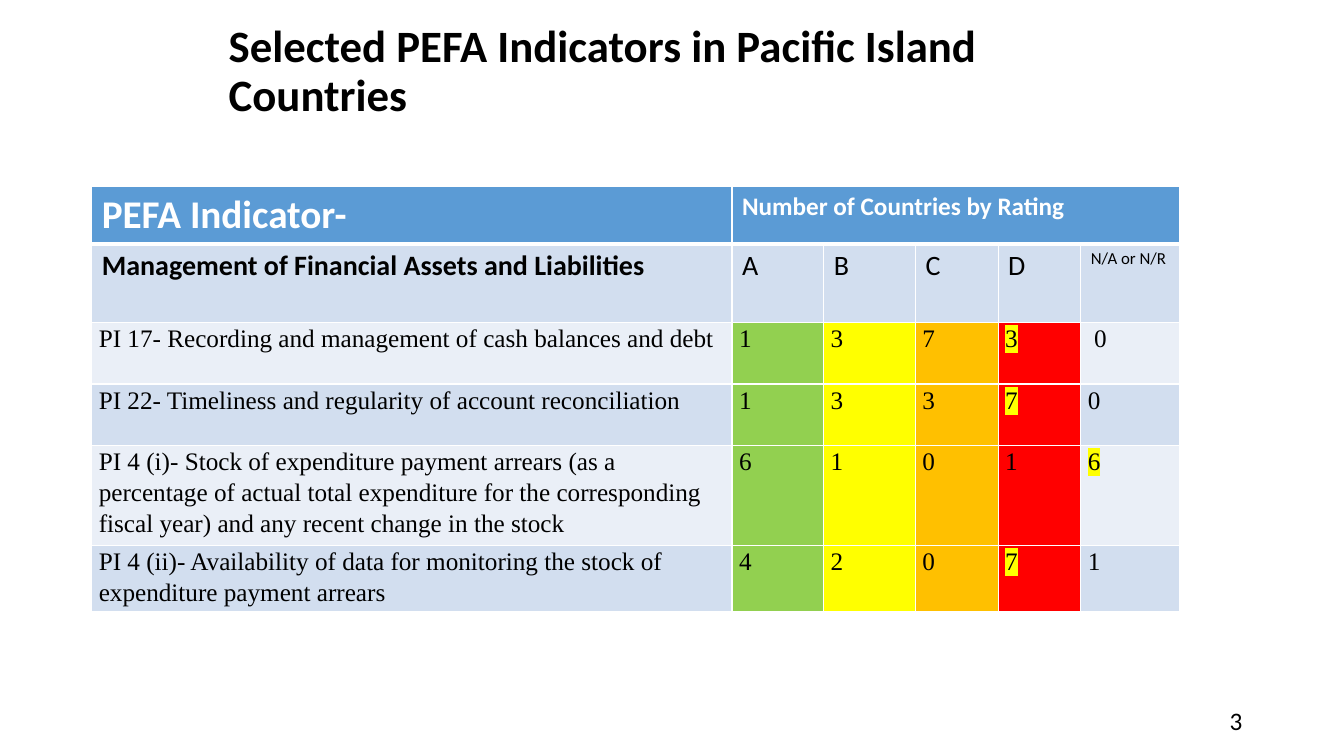
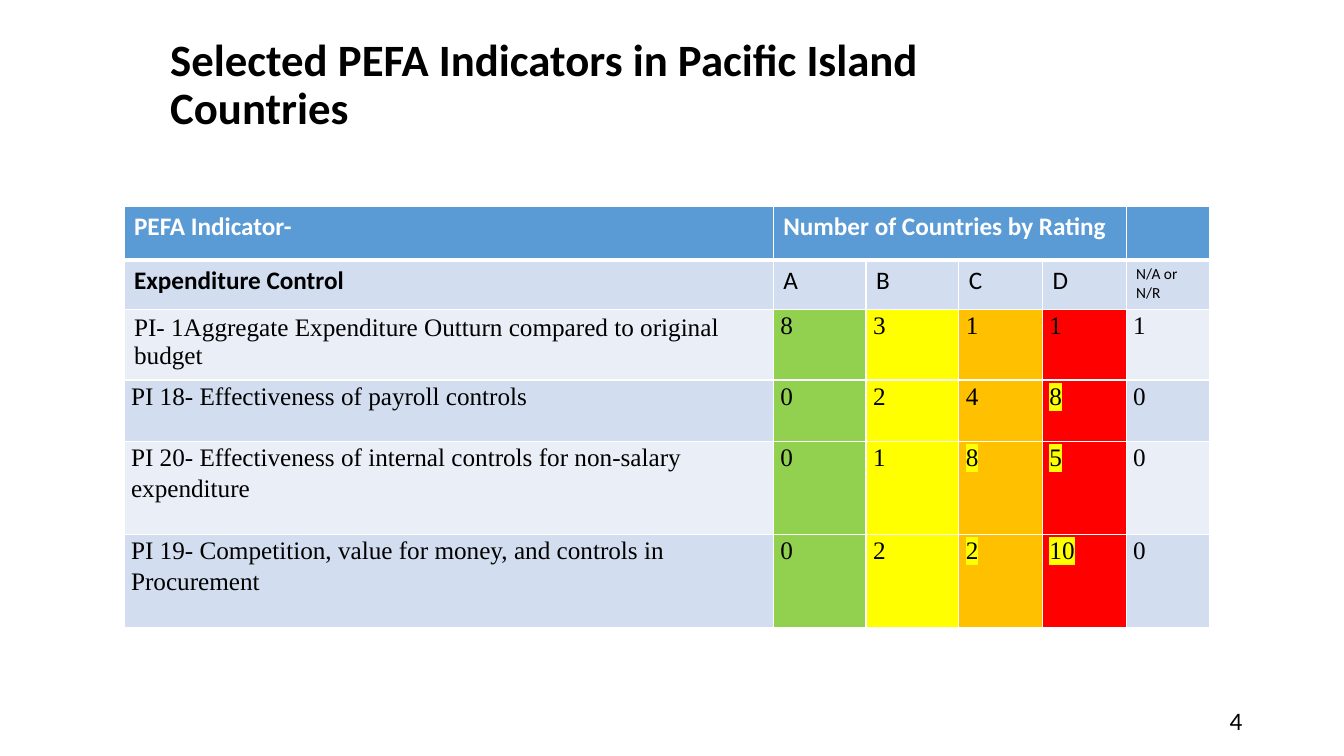
from lxml import etree
from pptx import Presentation
from pptx.dml.color import RGBColor
from pptx.enum.text import MSO_ANCHOR, PP_ALIGN
from pptx.oxml.ns import qn
from pptx.util import Inches, Pt

BLACK = RGBColor(0x00, 0x00, 0x00)
WHITE = RGBColor(0xFF, 0xFF, 0xFF)
HEADER_BLUE = RGBColor(0x5B, 0x9B, 0xD5)
BAND_DARK = RGBColor(0xD2, 0xDE, 0xEF)
BAND_LIGHT = RGBColor(0xEA, 0xEF, 0xF7)
GREEN = RGBColor(0x92, 0xD0, 0x50)
YELLOW = RGBColor(0xFF, 0xFF, 0x00)
AMBER = RGBColor(0xFF, 0xC0, 0x00)
RED = RGBColor(0xFF, 0x00, 0x00)
RATING_FILLS = [GREEN, YELLOW, AMBER, RED]

SANS, SERIF = "Calibri", "Times New Roman"
TITLE = "Selected PEFA Indicators in Pacific Island Countries"
INDICATOR, COUNTS = "PEFA Indicator-", "Number of Countries by Rating"
RATINGS = ["A", "B", "C", "D", "N/A or N/R"]
MARK = "*"  # a value ending in this is highlighted
WIDE_INSETS, TIGHT_INSETS = (0.1, 0.05), (0.07, 0)

# Content: each row is an indicator and its counts for A, B, C, D, N/A
SLIDES = [
    dict(
        page="3", title_at=(2.17, 0.3, 9, 0.84), table_at=(0.91, 1.85),
        columns=[6.35, 0.91, 0.91, 0.82, 0.82, 0.98],
        heights=[0.57, 0.78, 0.61, 0.61, 0.92, 0.61],
        area="Management of Financial Assets and Liabilities",
        header_size=28, area_size=20, na_size=12, header_span=5, wide_rows=[],
        rows=[
            ("PI 17- Recording and management of cash balances and debt",
             "1", "3", "7", "3*", " 0"),
            ("PI 22- Timeliness and regularity of account reconciliation",
             "1", "3", "3", "7*", "0"),
            ("PI 4 (i)- Stock of expenditure payment arrears (as a percentage of "
             "actual total expenditure for the corresponding fiscal year) and any "
             "recent change in the stock",
             "6", "1", "0", "1", "6*"),
            ("PI 4 (ii)- Availability of data for monitoring the stock of "
             "expenditure payment arrears",
             "4", "2", "0", "7*", "1"),
        ],
    ),
    dict(
        page="4", title_at=(1.59, 0.42, 9, 0.87), table_at=(1.23, 2.05),
        columns=[6.44, 0.92, 0.92, 0.83, 0.83, 0.83],
        heights=[0.53, 0.49, 0.67, 0.61, 0.92, 0.93],
        area="Expenditure Control",
        header_size=18, area_size=18, na_size=11, header_span=4, wide_rows=[0],
        rows=[
            ("PI- 1Aggregate Expenditure Outturn compared to original budget",
             "8", "3", "1", "1", "1"),
            ("PI 18- Effectiveness of payroll controls",
             "0", "2", "4", "8*", "0"),
            ("PI 20- Effectiveness of internal controls for non-salary expenditure",
             "0", "1", "8*", "5*", "0"),
            ("PI 19- Competition, value for money, and controls in Procurement",
             "0", "2", "2*", "10*", "0"),
        ],
    ),
]


def write(frame, text, size=18, font=SANS, color=BLACK, bold=False,
          align=PP_ALIGN.LEFT, spacing=1.0):
    """Write one formatted paragraph into a text frame."""
    frame.word_wrap = True
    paragraph = frame.paragraphs[0]
    paragraph.alignment, paragraph.line_spacing = align, spacing
    run = paragraph.add_run()
    run.text = text.rstrip(MARK)
    run.font.size, run.font.name, run.font.bold = Pt(size), font, bold
    run.font.color.rgb = color
    if text.endswith(MARK):
        highlight = etree.Element(qn("a:highlight"))
        etree.SubElement(highlight, qn("a:srgbClr"), val=str(YELLOW))
        run.font.fill._xPr.find(qn("a:solidFill")).addnext(highlight)


def add_text(slide, box, text, **style):
    frame = slide.shapes.add_textbox(*map(Inches, box)).text_frame
    frame.vertical_anchor = MSO_ANCHOR.MIDDLE
    write(frame, text, **style)


def set_borders(cell, **widths):
    """White cell borders, 1 pt unless a side is given its own width."""
    properties = cell._tc.get_or_add_tcPr()
    for place, side in enumerate("LRTB"):
        line = etree.Element(qn(f"a:ln{side}"), w=str(Pt(widths.get(side, 1))))
        fill = etree.SubElement(line, qn("a:solidFill"))
        etree.SubElement(fill, qn("a:srgbClr"), val=str(WHITE))
        properties.insert(place, line)


def fill_cell(cell, text, fill, insets=WIDE_INSETS, **style):
    cell.fill.solid()
    cell.fill.fore_color.rgb = fill
    cell.margin_left = cell.margin_right = Inches(insets[0])
    cell.margin_top = cell.margin_bottom = Inches(insets[1])
    if text:
        write(cell.text_frame, text, **style)


def add_ratings(slide, content):
    columns, heights = content["columns"], content["heights"]
    left, top = content["table_at"]
    table = slide.shapes.add_table(
        len(heights), len(columns), Inches(left), Inches(top),
        Inches(sum(columns)), Inches(sum(heights))).table
    table.first_row = table.horz_banding = False
    for column, width in zip(table.columns, columns):
        column.width = Inches(width)
    for row, height in zip(table.rows, heights):
        row.height = Inches(height)

    # Header band
    for c, text in enumerate([INDICATOR, COUNTS, "", "", "", ""]):
        fill_cell(table.cell(0, c), text, HEADER_BLUE, color=WHITE, bold=True,
                  size=content["header_size"] if c == 0 else 18)
        set_borders(table.cell(0, c), B=3)
    table.cell(0, 1).merge(table.cell(0, content["header_span"]))

    # Area and rating letters
    for c, text in enumerate([content["area"], *RATINGS]):
        last = c == len(RATINGS)
        fill_cell(table.cell(1, c), text, BAND_DARK, bold=c == 0,
                  size=content["na_size"] if last else content["area_size"])
        set_borders(table.cell(1, c), T=3)

    # Indicators and counts
    for r, values in enumerate(content["rows"]):
        band = BAND_DARK if r % 2 else BAND_LIGHT
        for c, (text, fill) in enumerate(zip(values, [band, *RATING_FILLS, band])):
            wide = c == 0 and r in content["wide_rows"]
            cell = table.cell(r + 2, c)
            fill_cell(cell, text, fill, font=SERIF,
                      insets=WIDE_INSETS if wide else TIGHT_INSETS,
                      spacing=1.0 if wide else 1.1)
            set_borders(cell)


def main():
    deck = Presentation()
    deck.slide_width, deck.slide_height = Inches(13.33), Inches(7.5)
    for content in SLIDES:
        slide = deck.slides.add_slide(deck.slide_layouts[6])
        add_text(slide, content["title_at"], TITLE, size=32, bold=True, spacing=0.9)
        add_ratings(slide, content)
        add_text(slide, (9.42, 6.95, 3, 0.4), content["page"], align=PP_ALIGN.RIGHT)
    deck.save("out.pptx")


if __name__ == "__main__":
    main()
